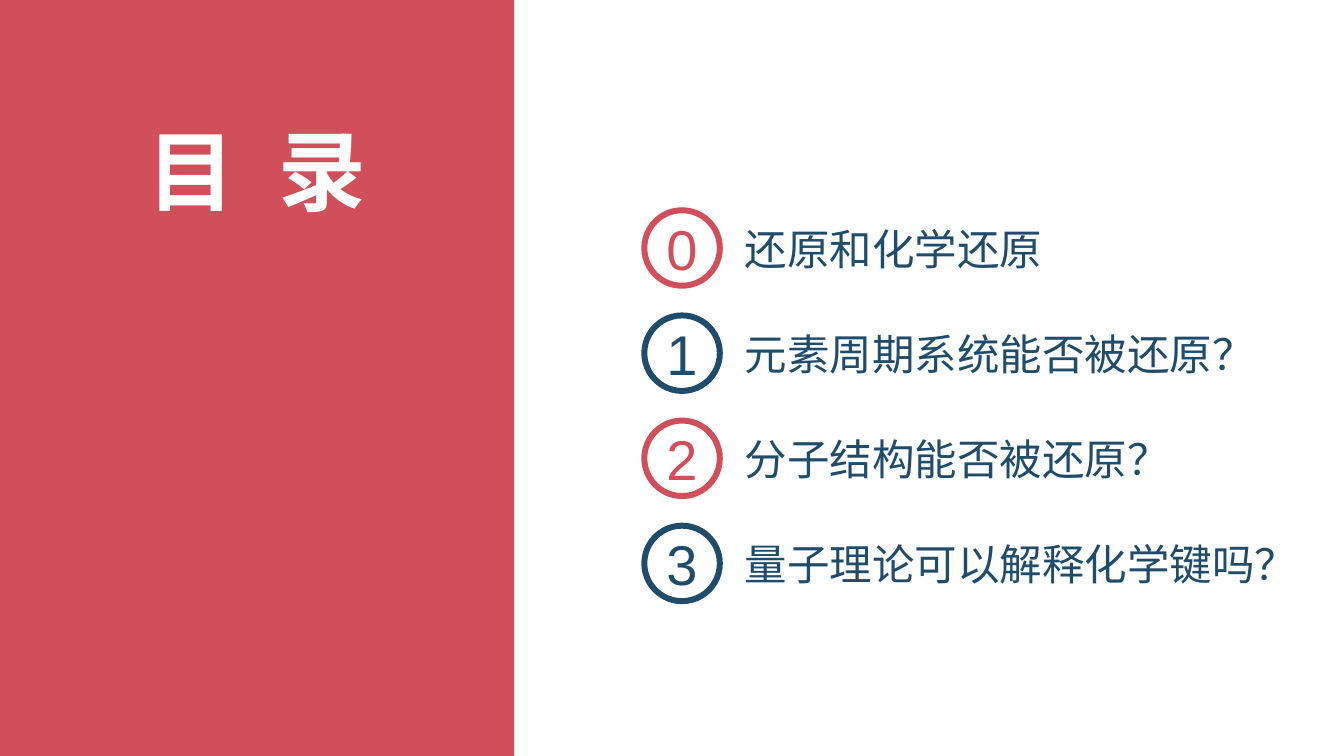
import dataclasses

import pptx
import pptx.dml.color
import pptx.enum.shapes
import pptx.enum.text
import pptx.util

TITLE = "目 录"
TOPICS = [
    ("0", "还原和化学还原", 5.38),
    ("1", "元素周期系统能否被还原？", 5.31),
    ("2", "分子结构能否被还原？", 5.15),
    ("3", "量子理论可以解释化学键吗？", 5.38),
]


@dataclasses.dataclass(frozen=True)
class Theme:
    red: str = "D14E5B"
    navy: str = "1F4C6B"
    white: str = "FFFFFF"
    font: str = "Arial"
    title_size: float = 66
    title_spacing: float = 9
    number_size: float = 42.2
    topic_size: float = 32
    ring_width: float = 4.5


THEME = Theme()
Inches = pptx.util.Inches
Pt = pptx.util.Pt
SHAPE = pptx.enum.shapes.MSO_SHAPE
ALIGN = pptx.enum.text.PP_ALIGN
AUTO_SIZE = pptx.enum.text.MSO_AUTO_SIZE

SLIDE_W, SLIDE_H = 14.06, 7.91
PANEL_W = 5.38
RING_X, FIRST_RING_Y, RING = 6.74, 2.2, 0.79
PITCH = 1.1
TOPIC_X, TOPIC_H = 7.79, 0.54


def rgb(value):
    return pptx.dml.color.RGBColor.from_string(value)


def box(x, y, w, h):
    return [Inches(v) for v in (x, y, w, h)]


def write(sp, text, size, color, align, bold=False, auto_size=AUTO_SIZE.NONE):
    tf = sp.text_frame
    tf.text = text
    tf.word_wrap = True
    tf.auto_size = auto_size
    tf.vertical_anchor = pptx.enum.text.MSO_ANCHOR.MIDDLE
    tf.margin_left = tf.margin_right = tf.margin_top = tf.margin_bottom = 0
    p = tf.paragraphs[0]
    p.alignment = align
    r = p.runs[0]
    r.font.name = THEME.font
    r.font.size = Pt(size)
    r.font.bold = bold
    r.font.color.rgb = rgb(color)
    return r


def add_panel(s):
    sp = s.shapes.add_shape(SHAPE.RECTANGLE, *box(0, 0, PANEL_W, SLIDE_H))
    sp.shadow.inherit = False
    sp.fill.solid()
    sp.fill.fore_color.rgb = rgb(THEME.red)
    sp.line.fill.background()
    s.shapes._spTree.insert(2, sp._element)


def add_title(s):
    sp = s.shapes.title
    sp.left, sp.top, sp.width, sp.height = box(1.36, 1.22, 2.66, 1.11)
    r = write(sp, TITLE, THEME.title_size, THEME.white, ALIGN.CENTER,
              bold=True, auto_size=AUTO_SIZE.SHAPE_TO_FIT_TEXT)
    r._r.get_or_add_rPr().set("spc", str(THEME.title_spacing * 100))


def add_topic(s, i, number, topic, width):
    y = FIRST_RING_Y + i * PITCH
    color = (THEME.red, THEME.navy)[i % 2]
    ring = s.shapes.add_shape(SHAPE.OVAL, *box(RING_X, y, RING, RING))
    ring.shadow.inherit = False
    ring.fill.solid()
    ring.fill.fore_color.rgb = rgb(THEME.white)
    ring.line.color.rgb = rgb(color)
    ring.line.width = Pt(THEME.ring_width)
    write(ring, number, THEME.number_size, color, ALIGN.CENTER)

    topic_y = y + (RING - TOPIC_H) / 2
    sp = s.shapes.add_textbox(*box(TOPIC_X, topic_y, width, TOPIC_H))
    write(sp, topic, THEME.topic_size, THEME.navy, ALIGN.LEFT,
          auto_size=AUTO_SIZE.SHAPE_TO_FIT_TEXT)


def main():
    prs = pptx.Presentation()
    prs.slide_width, prs.slide_height = Inches(SLIDE_W), Inches(SLIDE_H)
    s = prs.slides.add_slide(prs.slide_layouts[5])
    add_panel(s)
    add_title(s)
    for i, (number, topic, width) in enumerate(TOPICS):
        add_topic(s, i, number, topic, width)
    prs.save("out.pptx")


if __name__ == "__main__":
    main()
